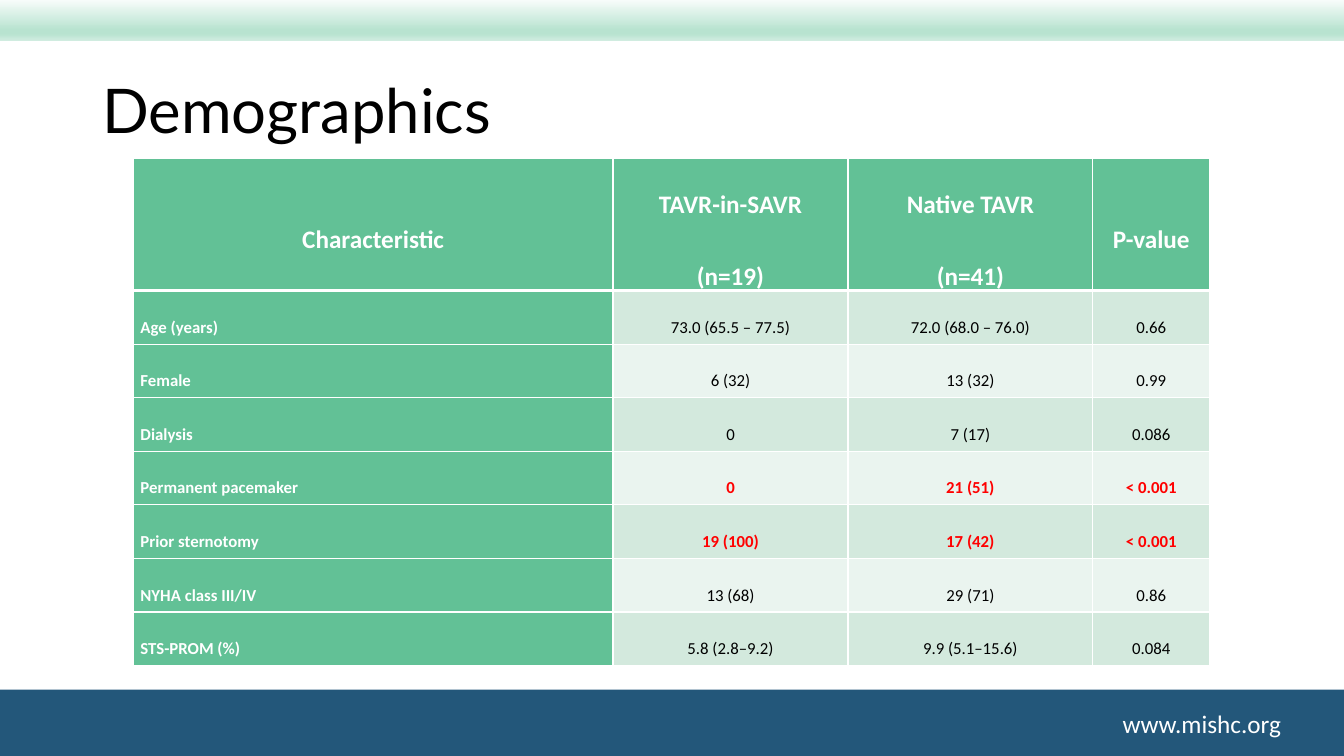
from dataclasses import dataclass
from lxml.etree import SubElement
from pptx import Presentation
from pptx.dml.color import RGBColor
from pptx.enum.shapes import MSO_SHAPE as Shape
from pptx.enum.text import MSO_ANCHOR as Anchor, PP_ALIGN as Align
from pptx.oxml.ns import qn
from pptx.util import Cm, Pt


@dataclass(frozen=True)
class Theme:
    title_font: str = "Lato"
    body_font: str = "Calibri"
    title_size: int = 44
    head_size: int = 18
    cell_size: int = 12
    white: str = "FFFFFF"
    black: str = "000000"
    red: str = "FF0000"
    navy: str = "23577A"
    green: str = "62C196"
    bands: tuple = ("D3E9DD", "EAF4EF")
    banner: tuple = ((0, "F7FCFA"), (74, "B8E3D0"), (83, "B8E3D0"), (100, "D0ECE0"))


class Deck:
    def __init__(self, theme):
        self.theme = theme
        self.prs = Presentation()
        self.prs.slide_width, self.prs.slide_height = Cm(33.87), Cm(19.05)
        self.s = self.prs.slides.add_slide(self.prs.slide_layouts[6])

    def bar(self, top, height, color):
        sp = self.s.shapes.add_shape(
            Shape.RECTANGLE, 0, Cm(top), self.prs.slide_width, Cm(height))
        sp.shadow.inherit = False
        sp.line.fill.background()
        sp.fill.solid()
        sp.fill.fore_color.rgb = RGBColor.from_string(color)
        return sp

    def gradient_bar(self, top, height, stops):
        sp = self.bar(top, height, stops[0][1])
        sp.fill.gradient()
        sp.fill.gradient_angle = 270
        stop_list = next(sp.element.iter(qn("a:gsLst")))
        for old in list(stop_list):
            stop_list.remove(old)
        for position, color in stops:
            stop = SubElement(stop_list, qn("a:gs"), pos=str(position * 1000))
            SubElement(stop, qn("a:srgbClr"), val=color)

    def style(self, p, font, size, color, bold=False):
        p.font.name = font
        p.font.size = Pt(size)
        p.font.bold = bold
        p.font.color.rgb = RGBColor.from_string(color)

    def text(self, text, left, top, width, height, font, size, color, spacing=1.0):
        sp = self.s.shapes.add_textbox(Cm(left), Cm(top), Cm(width), Cm(height))
        tf = sp.text_frame
        tf.word_wrap = True
        tf.vertical_anchor = Anchor.MIDDLE
        p = tf.paragraphs[0]
        p.text = text
        p.line_spacing = spacing
        self.style(p, font, size, color)

    def borders(self, cell, top=1, bottom=1):
        props = cell._tc.get_or_add_tcPr()
        widths = {"a:lnL": 1, "a:lnR": 1, "a:lnT": top, "a:lnB": bottom}
        for index, (tag, width) in enumerate(widths.items()):
            line = SubElement(props, qn(tag), w=str(Pt(width)))
            fill = SubElement(line, qn("a:solidFill"))
            SubElement(fill, qn("a:srgbClr"), val=self.theme.white)
            props.insert(index, line)

    def cell(self, cell, text, fill, size, color, bold, align):
        cell.text = text
        cell.vertical_anchor = Anchor.MIDDLE
        cell.margin_left = cell.margin_right = Cm(0.18)
        cell.margin_top = cell.margin_bottom = 0
        cell.fill.solid()
        cell.fill.fore_color.rgb = RGBColor.from_string(fill)
        paragraphs = cell.text_frame.paragraphs
        for p in paragraphs:
            p.alignment = align
            p.line_spacing = 2.0
            p.space_after = Pt(8 if len(paragraphs) > 1 else 0)
            self.style(p, self.theme.body_font, size, color, bold)

    def table(self, rows, left, top, widths, head_height, row_height, significant):
        t = self.theme
        height = head_height + row_height * (len(rows) - 1)
        table = self.s.shapes.add_table(
            len(rows), len(widths), Cm(left), Cm(top), Cm(sum(widths)), Cm(height)).table
        table.first_col = True
        for column, width in zip(table.columns, widths):
            column.width = Cm(width)
        for i, values in enumerate(rows):
            table.rows[i].height = Cm(row_height if i else head_height)
            for j, value in enumerate(values):
                cell = table.cell(i, j)
                label = i == 0 or j == 0
                red = values[0] in significant
                fill = t.green if label else t.bands[(i - 1) % 2]
                color = t.white if label else t.red if red else t.black
                size = t.cell_size if i else t.head_size
                align = Align.LEFT if i and j == 0 else Align.CENTER
                self.cell(cell, value, fill, size, color, label or red, align)
                self.borders(cell, 3 if i == 1 else 1, 3 if i == 0 else 1)


ROWS = [
    ("Characteristic", "TAVR-in-SAVR\n(n=19)", "Native TAVR\n(n=41)", "P-value"),
    ("Age (years)", "73.0 (65.5 – 77.5)", "72.0 (68.0 – 76.0)", "0.66"),
    ("Female", "6 (32)", "13 (32)", "0.99"),
    ("Dialysis", "0", "7 (17)", "0.086"),
    ("Permanent pacemaker", "0", "21 (51)", "< 0.001"),
    ("Prior sternotomy", "19 (100)", "17 (42)", "< 0.001"),
    ("NYHA class III/IV", "13 (68)", "29 (71)", "0.86"),
    ("STS-PROM (%)", "5.8 (2.8–9.2)", "9.9 (5.1–15.6)", "0.084"),
]


def main():
    t = Theme()
    deck = Deck(t)
    deck.bar(17.38, 1.67, t.navy)
    deck.gradient_bar(0, 1.03, t.banner)
    deck.text("www.mishc.org", 28.04, 17.73, 4.55, 1.02,
              t.body_font, t.head_size, t.white)
    deck.text("Demographics", 2.33, 1.02, 29.21, 3.68,
              t.title_font, t.title_size, t.black, 0.9)
    deck.table(ROWS, 3.36, 3.99, (12.09, 5.92, 6.17, 2.95), 3.33, 1.35,
               {"Permanent pacemaker", "Prior sternotomy"})
    deck.prs.save("out.pptx")


if __name__ == "__main__":
    main()
